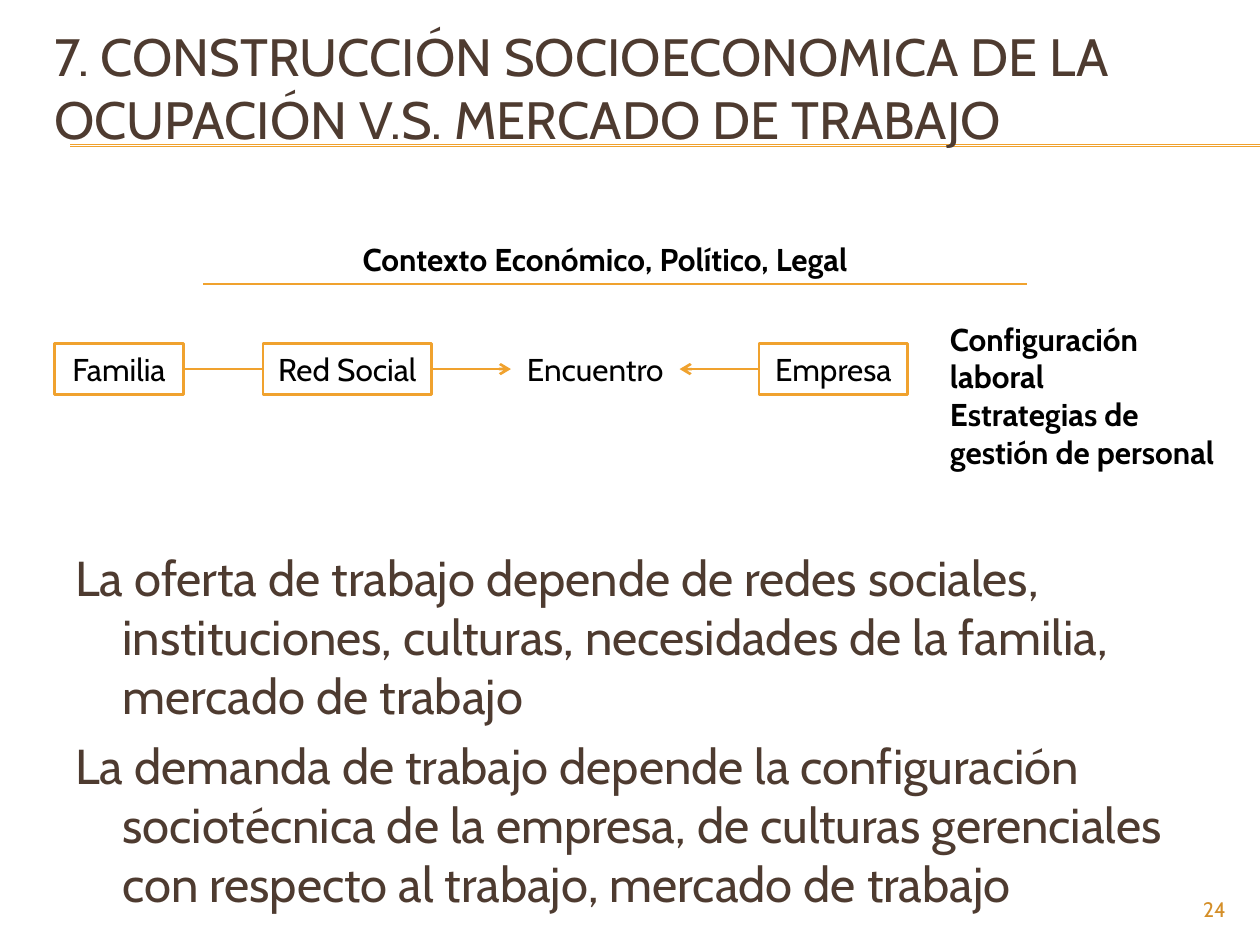
from lxml.etree import SubElement
from pptx import Presentation
from pptx.dml.color import RGBColor
from pptx.enum.shapes import MSO_CONNECTOR, MSO_SHAPE
from pptx.enum.text import MSO_ANCHOR as Anchor, PP_ALIGN as Align
from pptx.oxml.ns import qn
from pptx.util import Cm, Pt

COLORS = {"brown": "4E3B30", "orange": "F0A22E", "page": "D48F29", "black": "000000"}
FONT = "Cabin"
SLIDE_W, SLIDE_H = 25.4, 19.05

TITLE = "7. CONSTRUCCIÓN SOCIOECONOMICA DE LA OCUPACIÓN V.S. MERCADO DE TRABAJO"
CONTEXT = "Contexto Económico, Político, Legal"
STRATEGIES = ["Configuración laboral", "Estrategias de gestión de personal"]
CONCLUSIONS = [
    "La oferta de trabajo depende de redes sociales, instituciones, culturas, "
    "necesidades de la familia, mercado de trabajo",
    "La demanda de trabajo depende la configuración sociotécnica de la empresa, "
    "de culturas gerenciales con respecto al trabajo, mercado de trabajo",
]
PAGE = "24"

# name, width in cm, framed
ACTORS = [
    ("Familia", 2.6, True),
    ("Red Social", 3.4, True),
    ("Encuentro", 3.4, False),
    ("Empresa", 3.0, True),
]
# from, from side, to, to side, arrowhead
LINKS = [
    ("Familia", 3, "Red Social", 1, False),
    ("Red Social", 3, "Encuentro", 1, True),
    ("Empresa", 1, "Encuentro", 3, True),
]
CHAIN_LEFT, CHAIN_TOP, CHAIN_GAP, ACTOR_H = 1.1, 6.93, 1.6, 1.02
TITLE_RULES = [2.92, 2.95]


def color(name):
    return RGBColor.from_string(COLORS[name])


def write(shape, paragraphs, size, ink, bold=False, align=Align.LEFT,
          anchor=Anchor.TOP, wrap=True):
    frame = shape.text_frame
    frame.word_wrap = wrap
    frame.vertical_anchor = anchor
    for i, text in enumerate(paragraphs):
        paragraph = frame.paragraphs[0] if i == 0 else frame.add_paragraph()
        paragraph.alignment = align
        run = paragraph.add_run()
        run.text = text
        run.font.name = FONT
        run.font.size = Pt(size)
        run.font.bold = bold
        run.font.color.rgb = color(ink)
    return frame


def add_text(slide, box, paragraphs, size, ink, **style):
    return write(slide.shapes.add_textbox(*map(Cm, box)), paragraphs, size, ink, **style)


def add_line(slide, x1, y1, x2, y2, width):
    line = slide.shapes.add_connector(MSO_CONNECTOR.STRAIGHT, *map(Cm, (x1, y1, x2, y2)))
    line.line.color.rgb = color("orange")
    line.line.width = Pt(width)
    SubElement(line._element.spPr, qn("a:effectLst"))
    return line


def add_actor(slide, name, left, width, framed):
    box = [Cm(v) for v in (left, CHAIN_TOP, width, ACTOR_H)]
    if framed:
        actor = slide.shapes.add_shape(MSO_SHAPE.RECTANGLE, *box)
        actor.shadow.inherit = False
        actor.fill.background()
        actor.line.color.rgb = color("orange")
        actor.line.width = Pt(1.5)
    else:
        actor = slide.shapes.add_textbox(*box)
    write(actor, [name], 18, "black", align=Align.CENTER, anchor=Anchor.MIDDLE, wrap=False)
    return actor


def add_chain(slide):
    """Place the actors in a row with equal gaps and join them."""
    actors, left = {}, CHAIN_LEFT
    for name, width, framed in ACTORS:
        actors[name] = add_actor(slide, name, left, width, framed)
        left += width + CHAIN_GAP
    for start, start_side, end, end_side, arrow in LINKS:
        link = add_line(slide, 0, 0, 1, 1, 1.5)
        link.begin_connect(actors[start], start_side)
        link.end_connect(actors[end], end_side)
        if arrow:
            SubElement(link.line._get_or_add_ln(), qn("a:tailEnd"), type="arrow")


def main():
    prs = Presentation()
    prs.slide_width, prs.slide_height = Cm(SLIDE_W), Cm(SLIDE_H)
    slide = prs.slides.add_slide(prs.slide_layouts[6])

    for y in TITLE_RULES:
        add_line(slide, 1.42, y, SLIDE_W, y, 0.75)
    add_text(slide, (0.84, 0.58, 24.13, 2.34), [TITLE], 30, "brown", anchor=Anchor.MIDDLE)

    body = add_text(slide, (1.27, 10.92, 24.13, 6.2), CONCLUSIONS, 28, "brown")
    for paragraph in body.paragraphs:
        paragraph.space_before = Pt(6.6)
        properties = paragraph._p.get_or_add_pPr()
        properties.set("marL", str(Cm(0.95)))
        properties.set("indent", str(-Cm(0.95)))

    add_text(slide, (5.3, 4.72, 13.8, 1.02), [CONTEXT], 18, "black",
             bold=True, align=Align.CENTER)
    add_line(slide, 4.1, 5.72, 20.7, 5.72, 1.25)
    add_chain(slide)
    add_text(slide, (18.9, 6.32, 6, 3.3), STRATEGIES, 18, "black", bold=True)
    add_text(slide, (22.86, 17.98, 2.1, 0.69), [PAGE], 12, "page",
             align=Align.RIGHT, anchor=Anchor.MIDDLE)

    prs.save("out.pptx")


if __name__ == "__main__":
    main()
